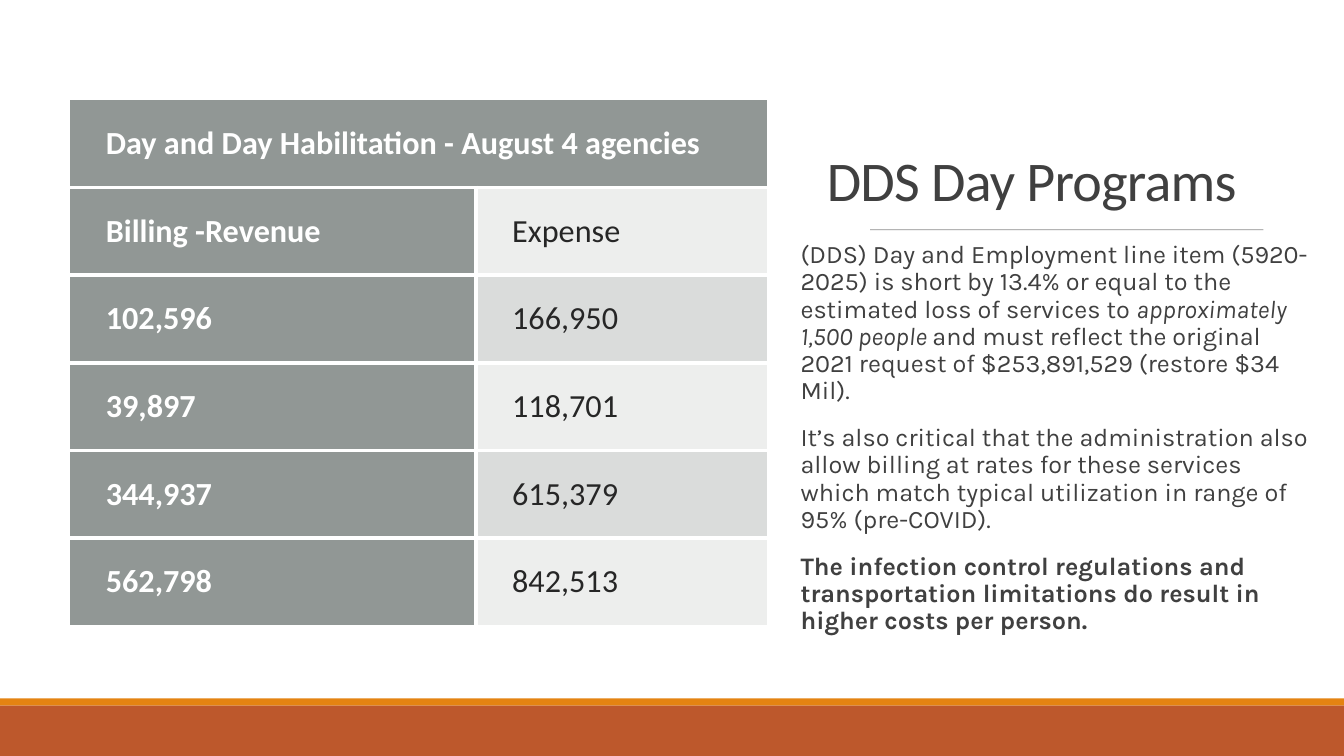
"""Build the DDS Day Programs slide with its revenue and expense table."""
from lxml import etree
from pptx import Presentation
from pptx.dml.color import RGBColor
from pptx.enum.shapes import MSO_CONNECTOR, MSO_SHAPE
from pptx.enum.text import MSO_ANCHOR, MSO_AUTO_SIZE, PP_ALIGN
from pptx.oxml.ns import qn
from pptx.util import Inches, Pt

RECT = MSO_SHAPE.RECTANGLE
LINE = MSO_CONNECTOR.STRAIGHT
TOP, BOTTOM = MSO_ANCHOR.TOP, MSO_ANCHOR.BOTTOM
LEFT, FIXED = PP_ALIGN.LEFT, MSO_AUTO_SIZE.NONE

WHITE, INK = "FFFFFF", "404040"
TITLE = "DDS Day Programs"
BODY = [
    [("(DDS) Day and Employment line item (5920-2025) is short by 13.4% or "
      "equal to the estimated loss of services to ", {}),
     ("approximately 1,500 people ", {"italic": True}),
     ("and must reflect the original 2021 request of $253,891,529 "
      "(restore $34 Mil).", {})],
    [("It’s also critical that the administration also allow billing at rates "
      "for these services which match typical utilization in range of 95% "
      "(pre-COVID).", {})],
    [("The infection control regulations and transportation limitations do "
      "result in higher costs per person.", {"bold": True})],
]
HEAD = "Day and Day Habilitation - August 4 agencies"
ROWS = [
    (HEAD, ""),
    ("Billing -Revenue", "Expense"),
    ("102,596", "166,950"),
    ("39,897", "118,701"),
    ("344,937", "615,379"),
    ("562,798", "842,513"),
]
COLS = (4.03, 2.89)
HIGH = 0.87
BANDS = [(0, 6.93, WHITE), (6.93, 0.07, "E48312"), (7, 0.5, "BD582C")]

TITLE_FRAME = {"vertical_anchor": BOTTOM, "auto_size": FIXED, "word_wrap": True}
BODY_FRAME = {"vertical_anchor": TOP, "auto_size": FIXED, "word_wrap": True,
              "margin_left": 0, "margin_right": 0,
              "margin_top": Inches(0.05), "margin_bottom": Inches(0.05)}
CELL_FRAME = {"vertical_anchor": TOP, "margin_left": Inches(0.36),
              "margin_right": Inches(0.21), "margin_top": Inches(0.21),
              "margin_bottom": Inches(0.21)}
TITLE_PARA = {"alignment": LEFT, "line_spacing": 0.85, "space_before": Pt(0)}
BODY_PARA = {"alignment": LEFT, "line_spacing": 0.9,
             "space_before": Pt(12), "space_after": Pt(2)}
CELL_PARA = {"alignment": LEFT, "line_spacing": 1.07, "space_after": Pt(2)}
TITLE_FONT = {"name": "Calibri", "size": Pt(40), "bold": False}
BODY_FONT = {"name": "Karla", "size": Pt(18)}
CELL_FONT = {"name": "Calibri", "size": Pt(23)}


def style(item, values):
    for key, value in values.items():
        setattr(item, key, value)


def place(shape, *box):
    sides = ("left", "top", "width", "height")
    style(shape, {side: Inches(v) for side, v in zip(sides, box)})


def paint(color, code, alpha=None):
    color.rgb = RGBColor.from_string(code)
    return alpha


def fill(item, code, alpha=100):
    item.fill.solid()
    paint(item.fill.fore_color, code)


def fade(root, alpha):
    for node in root.iter(qn("a:srgbClr")):
        etree.SubElement(node, qn("a:alpha")).set("val", str(alpha * 1000))


def write(para, text, look, code):
    run = para.add_run()
    run.text = text
    style(run.font, look)
    paint(run.font.color, code)
    return run


def edge(props, side):
    line = etree.SubElement(props, qn("a:ln" + side), w=str(Pt(3)))
    solid = etree.SubElement(line, qn("a:solidFill"))
    etree.SubElement(solid, qn("a:srgbClr"), val=WHITE)


def add_bands(slide):
    for top, high, code in BANDS:
        band = slide.shapes.add_shape(
            RECT, 0, Inches(top), Inches(13.33), Inches(high))
        band.shadow.inherit = False
        fill(band, code)
        band.line.fill.background()
        slide.shapes.title.element.addprevious(band.element)


def add_title(slide):
    title = slide.shapes.title
    place(title, 8.1, 0.57, 4.43, 1.59)
    style(title.text_frame, TITLE_FRAME)
    para = title.text_frame.paragraphs[0]
    style(para, TITLE_PARA)
    run = write(para, TITLE, TITLE_FONT, INK)
    run.font.size = Pt(40)
    para.runs[0].font.language_id = None
    run.font.fill.solid()
    paint(run.font.color, INK)
    for props in title.element.iter(qn("a:rPr")):
        props.set("spc", "-50")


def add_rule(slide):
    rule = slide.shapes.add_connector(
        LINE, Inches(8.63), Inches(2.28), Inches(12.53), Inches(2.28))
    rule.line.width = Pt(0.5)
    paint(rule.line.color, "808080")
    props = rule.element.find(qn("p:spPr"))
    fade(props, 90)
    etree.SubElement(props, qn("a:effectLst"))


def add_body(slide):
    body = slide.placeholders[1]
    place(body, 7.94, 2.35, 5.09, 4.72)
    frame = body.text_frame
    style(frame, BODY_FRAME)
    for i, parts in enumerate(BODY):
        para = frame.add_paragraph() if i else frame.paragraphs[0]
        style(para, BODY_PARA)
        for text, look in parts:
            write(para, text, {**BODY_FONT, **look}, INK)
    for props in body.element.iter(qn("a:pPr")):
        props.set("marL", "0")
        props.set("indent", "0")
        etree.SubElement(props, qn("a:buNone"))


def add_cell(cell, text, row, col):
    style(cell, CELL_FRAME)
    para = cell.text_frame.paragraphs[0]
    style(para, CELL_PARA)
    if text:
        write(para, text, {**CELL_FONT, "bold": col == 0},
              "262626" if col else WHITE)
    props = cell._tc.get_or_add_tcPr()
    sides = {"L": col > 0, "T": row > 0, "B": row < len(ROWS) - 1}
    for side, shown in sides.items():
        if shown:
            edge(props, side)
    fill(cell, "878E8B" if col else "636B68")
    fade(props.find(qn("a:solidFill")),
         (30 if row % 2 == 0 else 15) if col else 70)


def add_grid(slide):
    grid = slide.shapes.add_table(
        len(ROWS), len(COLS), Inches(0.69), Inches(0.99),
        Inches(sum(COLS)), Inches(HIGH * len(ROWS))).table
    style(grid, {"first_row": False, "horz_banding": False})
    for col, wide in zip(grid.columns, COLS):
        col.width = Inches(wide)
    for r, texts in enumerate(ROWS):
        grid.rows[r].height = Inches(HIGH)
        for c, text in enumerate(texts):
            add_cell(grid.cell(r, c), text, r, c)
    grid.cell(0, 0).merge(grid.cell(0, 1))


def main():
    deck = Presentation()
    deck.slide_width, deck.slide_height = Inches(13.33), Inches(7.5)
    slide = deck.slides.add_slide(deck.slide_layouts[1])
    for add in (add_bands, add_title, add_rule, add_body, add_grid):
        add(slide)
    deck.save("out.pptx")


if __name__ == "__main__":
    main()
